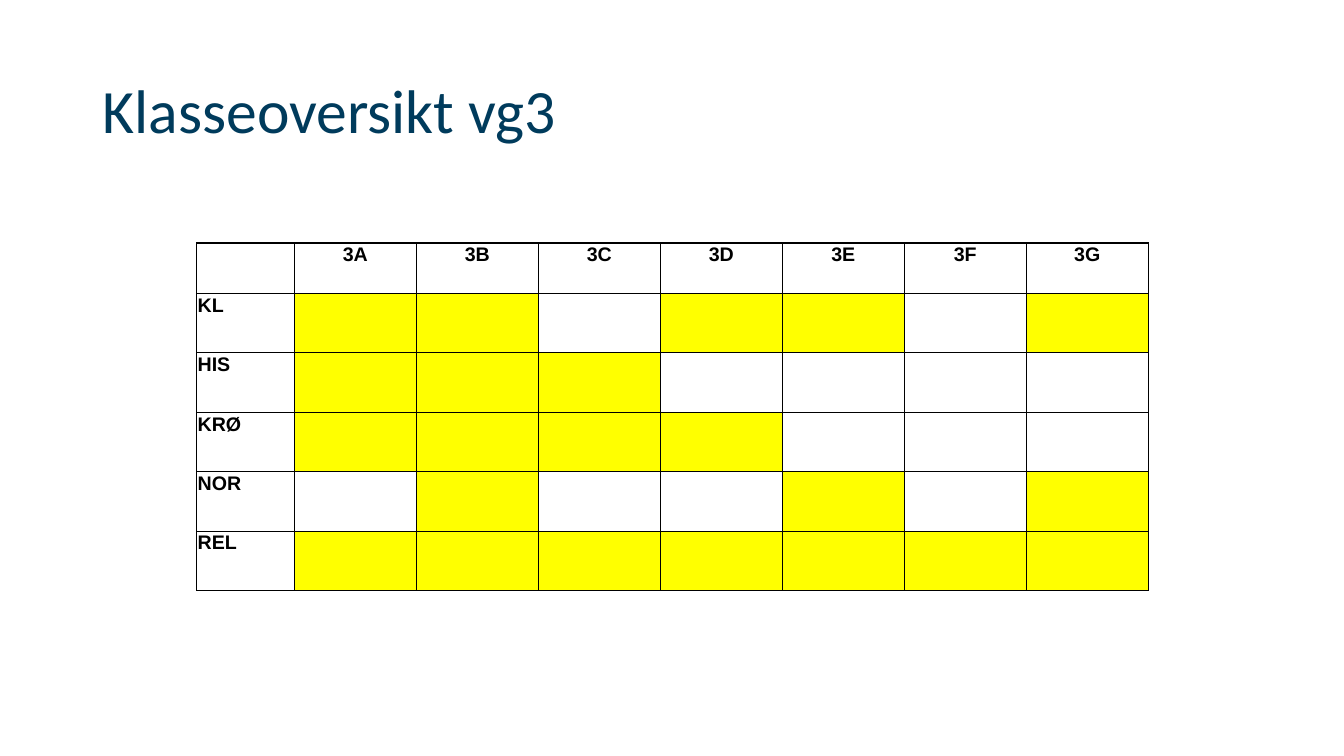
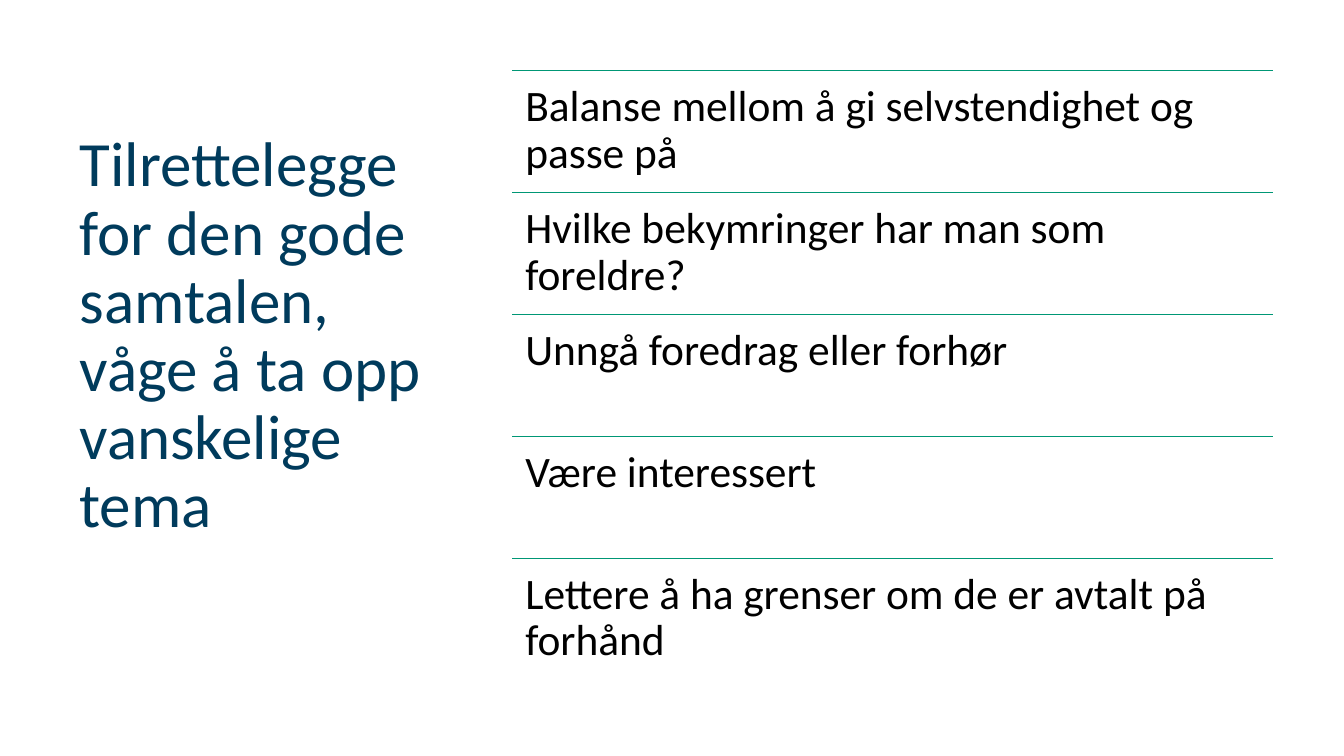
from lxml import etree
from pptx import Presentation
from pptx.dml.color import RGBColor
from pptx.enum import shapes, text
from pptx.oxml import ns
from pptx.util import Inches, Pt

NAVY, GREEN, YELLOW, WHITE, BLACK = "003B5C", "009775", "FFFF00", "FFFFFF", "000000"


def rgb(hex_color):
    return RGBColor.from_string(hex_color)


def add_text(slide, wording, left, top, width, height, size, color, anchor, inset):
    """Add a wrapped Calibri text box; inset is (horizontal, vertical) in inches."""
    box = slide.shapes.add_textbox(Inches(left), Inches(top), Inches(width), Inches(height))
    frame = box.text_frame
    frame.word_wrap = True
    frame.vertical_anchor = anchor
    frame.margin_left = frame.margin_right = Inches(inset[0])
    frame.margin_top = frame.margin_bottom = Inches(inset[1])
    frame.text = wording
    paragraph = frame.paragraphs[0]
    paragraph.line_spacing = 0.9
    for run in paragraph.runs:
        run.font.name = "Calibri"
        run.font.size = Pt(size)
        run.font.color.rgb = rgb(color)


presentation = Presentation()
presentation.slide_width = Inches(13.33)
presentation.slide_height = Inches(7.5)
blank = presentation.slide_layouts[6]

titles = [
    ("Klasseoversikt vg3", 0.92, 0.4, 11.5, 1.45, 44),
    ("Tilrettelegge for den gode samtalen,\vvåge å ta opp vanskelige tema", 0.69, 0.7, 3.63, 5.28, 45),
]
for title, left, top, width, height, size in titles:
    slide = presentation.slides.add_slide(blank)
    add_text(slide, title, left, top, width, height, size, NAVY, text.MSO_ANCHOR.MIDDLE, (0.1, 0.05))
class_slide, talk_slide = presentation.slides

# Class overview: each subject is marked for the classes that have it
classes = "ABCDEFG"
subjects = {"KL": "ABDEG", "HIS": "ABC", "KRØ": "ABCD", "NOR": "BEG", "REL": "ABCDEFG"}
rows = [[""] + ["3" + letter for letter in classes]]
rows += [[subject] + [""] * len(classes) for subject in subjects]
marked = ["", *subjects.values()]
last_row, last_column = len(subjects), len(classes)

table = class_slide.shapes.add_table(
    len(rows), len(rows[0]), Inches(1.95), Inches(2.41), Inches(9.43), Inches(3.44)
).table
table.first_row = table.horz_banding = False
for index, column in enumerate(table.columns):
    column.width = Inches(1.21 if index else 0.97)
for index, row in enumerate(table.rows):
    row.height = Inches(0.59 if index else 0.5)

for row_index, row in enumerate(rows):
    for column_index, wording in enumerate(row):
        cell = table.cell(row_index, column_index)
        cell.margin_left = cell.margin_right = cell.margin_top = Inches(0.01)
        cell.margin_bottom = Inches(0.05)
        cell.text = wording
        paragraph = cell.text_frame.paragraphs[0]
        if row_index == 0:
            paragraph.alignment = text.PP_ALIGN.CENTER
        for run in paragraph.runs:
            run.font.name = "Arial"
            run.font.size = Pt(14)
            run.font.bold = True
            run.font.color.rgb = rgb(BLACK)

        thick_edges = {
            "lnL": column_index == 0,
            "lnR": column_index == last_column,
            "lnT": row_index <= 2,
            "lnB": row_index <= 1 or row_index == last_row,
        }
        properties = cell._tc.get_or_add_tcPr()
        for edge, thick in thick_edges.items():
            line = etree.SubElement(properties, ns.qn("a:" + edge), w=str(Pt(1 if thick else 0.5)))
            line_fill = etree.SubElement(line, ns.qn("a:solidFill"))
            etree.SubElement(line_fill, ns.qn("a:srgbClr"), val=BLACK)

        is_marked = column_index > 0 and classes[column_index - 1] in marked[row_index]
        cell.fill.solid()
        cell.fill.fore_color.rgb = rgb(YELLOW if is_marked else WHITE)

# Advice list: a rule above each point
advice = [
    "Balanse mellom å gi selvstendighet og passe på",
    "Hvilke bekymringer har man som foreldre?",
    "Unngå foredrag eller forhør",
    "Være interessert",
    "Lettere å ha grenser om de er avtalt på forhånd",
]
list_left, list_top, list_width, step = 5.08, 0.7, 7.55, 1.21
for index, point in enumerate(advice):
    top = list_top + index * step
    rule = talk_slide.shapes.add_connector(
        shapes.MSO_CONNECTOR.STRAIGHT,
        Inches(list_left), Inches(top), Inches(list_left + list_width), Inches(top),
    )
    rule.line.color.rgb = rgb(GREEN)
    rule.line.width = Pt(1)
    etree.SubElement(rule._element.spPr, ns.qn("a:effectLst"))
    add_text(talk_slide, point, list_left, top, list_width, step, 31, BLACK, text.MSO_ANCHOR.TOP, (0.13, 0.13))

presentation.save("out.pptx")
